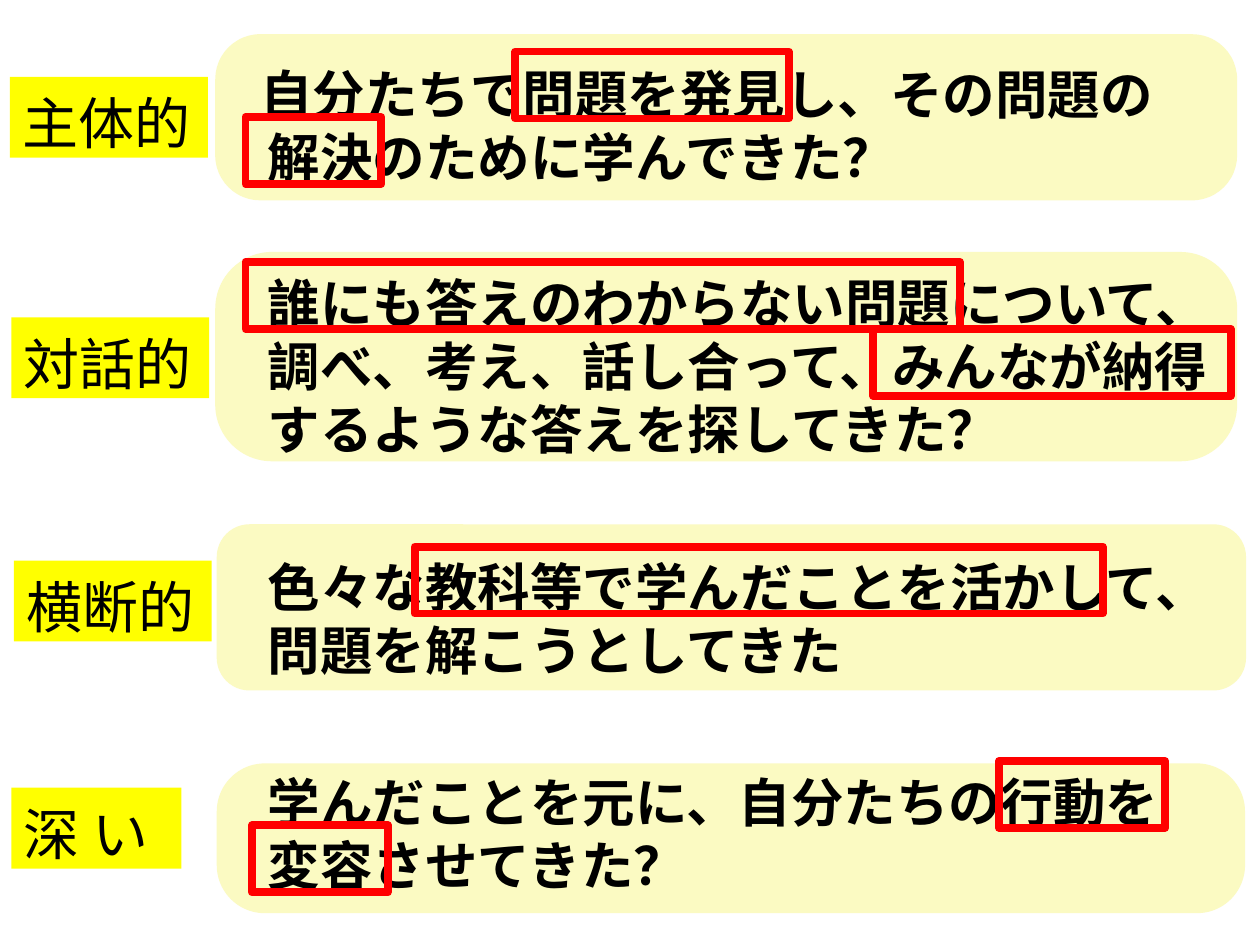
"""Build a slide that reviews four qualities of learning, with key phrases framed in red."""
from lxml.etree import SubElement
from pptx import Presentation
from pptx.dml.color import RGBColor
from pptx.enum.shapes import MSO_SHAPE as Shape
from pptx.enum.text import MSO_ANCHOR as Anchor, MSO_AUTO_SIZE as AutoSize, PP_ALIGN as Align
from pptx.oxml.ns import qn
from pptx.util import Cm, Pt

COLORS = {"card": "FBFAC2", "label": "FFFF00", "frame": "FF0000", "text": "000000"}
JAPANESE_FONT = "Noto Sans CJK JP"
LABEL_HEIGHT = 1.63
FRAME_HEIGHT = 1.35
FIRST_INDENT, INDENT = 0.91, 1.06

CARDS = [
    (4.34, 0.69, 20.6, 3.35, 0.271),
    (4.34, 5.08, 20.6, 4.22, 0.271),
    (4.37, 10.57, 20.75, 3.35, 0.197),
    (4.37, 15.39, 20.73, 3.02, 0.321),
]
LABELS = [
    ("主体的", 0.2, 1.55, 3.99),
    ("対話的", 0.23, 6.4, 3.99),
    ("横断的", 0.28, 11.3, 3.99),
    ("深 い", 0.23, 15.88, 3.43),
]
QUESTIONS = [
    (0, ["自分たちで問題を発見し、その問題の", "解決のために学んできた？"]),
    (47.5, ["誰にも答えのわからない問題について、",
            "調べ、考え、話し合って、みんなが納得",
            "するような答えを探してきた？"]),
    (54.5, ["色々な教科等で学んだことを活かして、", "問題を解こうとしてきた"]),
    (50.5, ["学んだことを元に、自分たちの行動を", "変容させてきた？"]),
]
FRAMES = [
    (10.39, 1.04, 5.51),
    (4.95, 2.36, 2.74),
    (4.95, 5.28, 14.4),
    (17.6, 6.63, 7.21),
    (8.36, 11.02, 13.87),
    (5.08, 16.64, 2.74),
    (20.14, 15.34, 3.35),
]


def color(name):
    """Return the named colour."""
    return RGBColor.from_string(COLORS[name])


def write(para, text, *, size, font, line, bold=False, before=0, indent=0):
    """Write one formatted line of text into a paragraph."""
    para.alignment = Align.LEFT
    para.line_spacing, para.space_before = Pt(line), Pt(before)
    properties = para._p.get_or_add_pPr()
    properties.set("marL", str(Cm(indent)))
    properties.set("indent", "0")
    span = para.add_run()
    span.text = text
    span.font.size, span.font.bold, span.font.name = Pt(size), bold, font
    span.font.color.rgb = color("text")
    SubElement(span._r.get_or_add_rPr(), qn("a:ea"), typeface=JAPANESE_FONT)


def add_box(page, kind, left, top, width, height, *, fill=None, line=None):
    """Add a preset shape with a plain fill or outline."""
    box = page.shapes.add_shape(kind, Cm(left), Cm(top), Cm(width), Cm(height))
    box.shadow.inherit = False
    if fill:
        box.fill.solid()
        box.fill.fore_color.rgb = color(fill)
    else:
        box.fill.background()
    if line:
        box.line.color.rgb = color(line)
        box.line.width = Pt(4.5)
    else:
        box.line.fill.background()
    return box


def add_card(page, left, top, width, height, rounding):
    """Add a rounded background card."""
    card = add_box(page, Shape.ROUNDED_RECTANGLE, left, top, width, height, fill="card")
    card.adjustments[0] = rounding


def add_label(page, text, left, top, width):
    """Add a yellow label that names one quality."""
    label = add_box(page, Shape.RECTANGLE, left, top, width, LABEL_HEIGHT, fill="label")
    frame = label.text_frame
    frame.word_wrap = False
    frame.vertical_anchor = Anchor.MIDDLE
    frame.margin_top = frame.margin_bottom = 0
    write(frame.paragraphs[0], text, size=32, font=JAPANESE_FONT, line=44)


def add_questions(page):
    """Add the text box that holds all four questions."""
    box = page.shapes.add_textbox(Cm(4.09), Cm(0.76), Cm(22.94), Cm(17.53))
    frame = box.text_frame
    frame.word_wrap = True
    frame.auto_size = AutoSize.NONE
    frame.margin_top = Cm(0.49)
    para = frame.paragraphs[0]
    indent = FIRST_INDENT
    for gap, lines in QUESTIONS:
        for number, text in enumerate(lines):
            write(para, text, size=30, font="Calibri", line=36, bold=True,
                  before=0 if number else gap, indent=indent)
            indent = INDENT
            if (gap, lines) != QUESTIONS[-1] or text != lines[-1]:
                para = frame.add_paragraph()


def main():
    """Build and save the deck."""
    deck = Presentation()
    deck.slide_width, deck.slide_height = Cm(25.4), Cm(19.05)
    page = deck.slides.add_slide(deck.slide_layouts[6])
    for card in CARDS:
        add_card(page, *card)
    add_questions(page)
    for label in LABELS:
        add_label(page, *label)
    for left, top, width in FRAMES:
        add_box(page, Shape.RECTANGLE, left, top, width, FRAME_HEIGHT, line="frame")
    deck.save("out.pptx")


if __name__ == "__main__":
    main()
